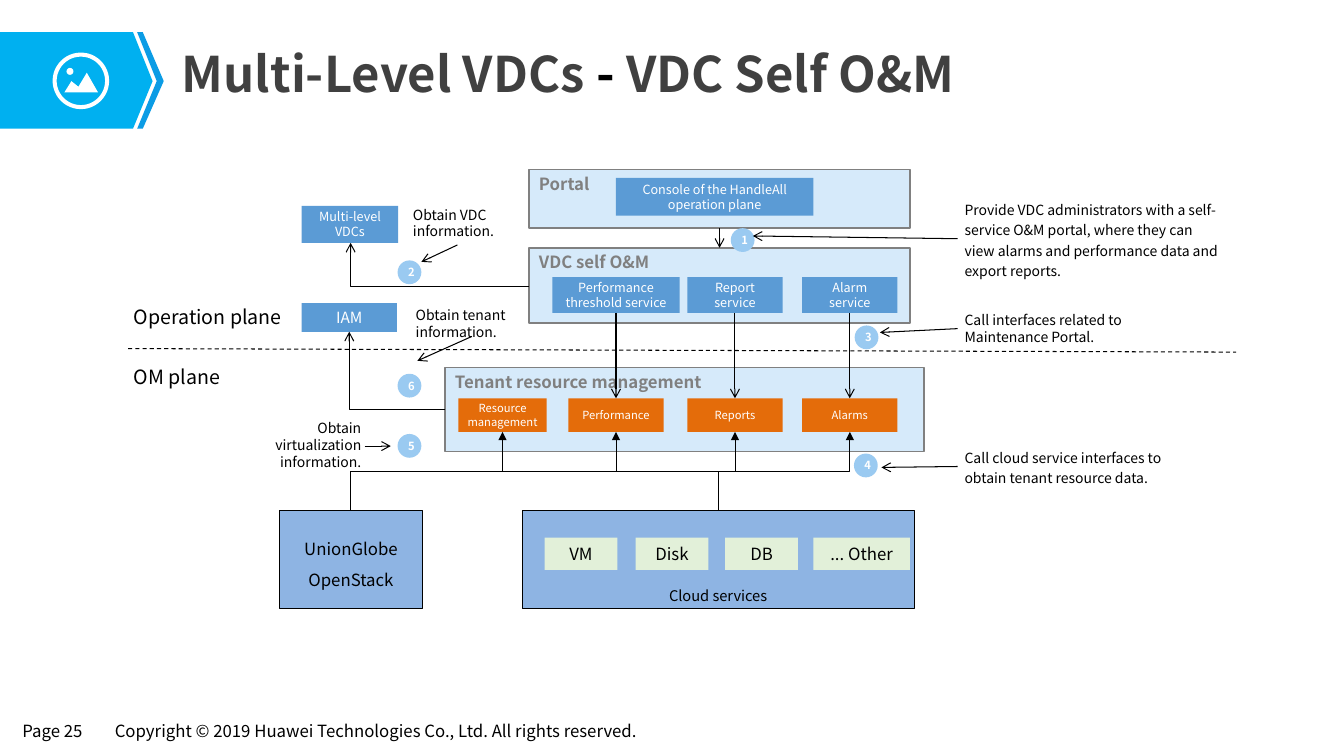
"""Builds the slide on self O&M in multi-level VDCs."""
from lxml.etree import SubElement
from pptx import Presentation
from pptx.dml.color import RGBColor
from pptx.enum.dml import MSO_LINE
from pptx.enum.shapes import MSO_CONNECTOR, MSO_SHAPE
from pptx.enum.text import MSO_ANCHOR, PP_ALIGN
from pptx.oxml.ns import qn
from pptx.util import Pt

HUES = {
    "black": "000000", "white": "FFFFFF", "dark": "404040", "gray": "808080",
    "cyan": "00B0F0", "edge": "0B9CE5", "pale": "D6EAFA", "blue": "5B9BD5",
    "orange": "E46C0A", "cloud": "8EB4E3", "green": "E2F0D9", "dot": "9ACAF1",
}
HUES = {name: RGBColor.from_string(code) for name, code in HUES.items()}
FONT = "Noto Sans CJK SC"
LEFT, MID, RIGHT = PP_ALIGN.LEFT, PP_ALIGN.CENTER, PP_ALIGN.RIGHT
TOP, CORE, BASE = MSO_ANCHOR.TOP, MSO_ANCHOR.MIDDLE, MSO_ANCHOR.BOTTOM

deck = Presentation()
deck.slide_width, deck.slide_height = Pt(960), Pt(540)
slide = deck.slides.add_slide(deck.slide_layouts[6])
shapes = slide.shapes


def box(at, text="", size=9, ink="white", fill=None, line=None, width=0.75,
        bold=False, align=MID, anchor=CORE, pad=7, gap=None, kind=MSO_SHAPE.RECTANGLE):
    """Adds a shape, or a text box if kind is None."""
    at = [Pt(n) for n in at]
    item = shapes.add_shape(kind, *at) if kind else shapes.add_textbox(*at)
    if kind:
        item.shadow.inherit = False
    if fill:
        item.fill.solid()
        item.fill.fore_color.rgb = HUES[fill]
    else:
        item.fill.background()
    if line:
        item.line.color.rgb = HUES[line]
        item.line.width = Pt(width)
    else:
        item.line.fill.background()
    if text:
        frame = item.text_frame
        frame.word_wrap = True
        frame.vertical_anchor = anchor
        frame.margin_left = frame.margin_right = Pt(pad)
        frame.margin_top = frame.margin_bottom = Pt(3)
        para = frame.paragraphs[0]
        para.text = text
        para.alignment = align
        if gap:
            para.line_spacing = gap
        para.font.name, para.font.size, para.font.bold = FONT, Pt(size), bold
        para.font.color.rgb = HUES[ink]
    return item


def link(start, end, width=0.75, tip=None, kind=MSO_CONNECTOR.STRAIGHT, dash=None):
    """Adds a black connector with an optional arrowhead."""
    item = shapes.add_connector(kind, *[Pt(n) for n in (*start, *end)])
    item.line.color.rgb = HUES["black"]
    item.line.width = Pt(width)
    if dash:
        item.line.dash_style = dash
    props = item._element.spPr
    if tip:
        SubElement(props.find(qn("a:ln")), qn("a:tailEnd"), type=tip)
    SubElement(props, qn("a:effectLst"))
    return item


box((9, 512, 64, 21), "Page 25", 12, "black", align=LEFT, anchor=TOP, kind=None)
box((75, 512, 404, 21), "Copyright © 2019 Huawei Technologies Co., Ltd. All rights reserved.",
    12, "black", align=LEFT, anchor=TOP, kind=None)

outlines = [
    ("cyan", [(0, 23), (95, 23), (109, 57.5), (95, 92), (0, 92)]),
    ("edge", [(98, 23), (102, 23), (117, 57.5), (102, 92), (98, 92), (112, 57.5)]),
    ("white", [(45.5, 66), (51, 57.5), (55.5, 62.5), (62.5, 52.5), (70.5, 66)]),
]
for hue, points in outlines:
    pen = shapes.build_freeform(*points[0], scale=Pt(1))
    pen.add_line_segments(points[1:], close=True)
    form = pen.convert_to_shape()
    form.shadow.inherit = False
    form.fill.solid()
    form.fill.fore_color.rgb = HUES[hue]
    form.line.fill.background()
box((39, 39, 37.5, 37.5), line="white", width=2.9, kind=MSO_SHAPE.OVAL)
box((47.5, 48.5, 5, 5), fill="white", kind=MSO_SHAPE.OVAL)

title = box((123, 18, 801, 68), "Multi-Level VDCs ", 35, "dark", bold=True, align=LEFT, kind=None)
para = title.text_frame.paragraphs[0]
para.font.size = None
for text, size, hue in [("- ", 36, "black"), ("VDC Self O&M", 35, "dark")]:
    run = para.add_run()
    run.text = text
    run.font.size, run.font.color.rgb = Pt(size), HUES[hue]
para.runs[0].font.size = Pt(35)

panels = {}
for name, at in [
    ("Tenant resource management", (318, 262.5, 342, 60)),
    ("VDC self O&M", (378, 177, 272, 54)),
    ("Portal", (378, 121, 272, 42)),
]:
    panels[name] = box(at, name, 12, "gray", "pale", "gray", 1.25, True, LEFT, TOP)

box((440, 127, 141, 27), "Console of the HandleAll operation plane", fill="blue")
box((215.5, 147, 69, 26.5), "Multi-level VDCs", fill="blue")
box((215.5, 216.5, 68, 20.5), "IAM", 11, fill="blue")
box((327.5, 284.5, 63, 24), "Resource management", 8, fill="orange", pad=5)

pairs = []
for mid, wide, upper, lower in [
    (440, 91, "Performance threshold service", "Performance"),
    (525, 68, "Report service", "Reports"),
    (607, 68, "Alarm service", "Alarms"),
]:
    pairs.append((box((mid - wide / 2, 198, wide, 25.5), upper, fill="blue"),
                  box((mid - 34, 284.5, 68, 24), lower, 8, fill="orange", pad=5)))

cloud = box((373, 364.5, 280, 70.5), "Cloud services", 10.5, "black", "cloud", "black",
            anchor=BASE, gap=2)
for left, wide, name in [(389, 52, "VM"), (454, 52, "Disk"), (518, 52, "DB"), (581, 69, "... Other")]:
    box((left, 384, wide, 23), name, 12, "black", "green")
box((199.5, 364.5, 102.5, 70), "UnionGlobe OpenStack", 12, "black", "cloud", "black", gap=1.5)

link((91.5, 249), (883, 251.5), dash=MSO_LINE.DASH)
for top, name in [(214.5, "Operation plane"), (258, "OM plane")]:
    box((88.5, top, 139, 24.5), name, 14, "black", align=LEFT, anchor=TOP, kind=None)

spots = [(522, 163), (284, 186), (610.5, 232.5), (610, 324), (284, 310), (284, 267)]
for step, spot in enumerate(spots, 1):
    box((*spot, 17, 17), str(step), 8, fill="dot", bold=True, kind=MSO_SHAPE.OVAL)

notes = [
    ((684, 146, 195, 49), (0.5, 0, 0.46, -0.75), LEFT, 1.2,
     "Provide VDC administrators with a self-service O&M portal, where they can "
     "view alarms and performance data and export reports."),
    ((290, 150.5, 73.5, 17.5), (1.4, 0.5, 2.09, 0.15), LEFT, None, "Obtain VDC information."),
    ((292, 223.5, 88.5, 15), (1.12, 0.51, 2.28, 0.07), LEFT, None, "Obtain tenant information."),
    ((178, 309, 85, 17.5), (0.55, 0.97, 0.55, 1.19), RIGHT, None, "Obtain virtualization information."),
    ((684, 225, 146, 19.5), (0.5, 0, 0.64, -0.38), LEFT, None,
     "Call interfaces related to Maintenance Portal."),
    ((684, 322, 170, 22.5), (0.5, 0, 0.53, -0.32), LEFT, 1.2,
     "Call cloud service interfaces to obtain tenant resource data."),
]
for at, bends, align, gap, text in notes:
    note = box(at, text, 10, "black", line="black", align=align, pad=5, gap=gap,
               kind=MSO_SHAPE.LINE_CALLOUT_1_NO_BORDER)
    for index, bend in enumerate(bends):
        note.adjustments[index] = bend
    SubElement(note._element.spPr.find(qn("a:ln")), qn("a:tailEnd"), type="arrow")

for above, below in [(panels["Portal"], panels["VDC self O&M"]), *pairs]:
    arrow = link((0, 0), (0, 0), tip="arrow")
    arrow.begin_connect(above, 2)
    arrow.end_connect(below, 0)

for start, end in [((378, 204.5), (250.5, 173.5)), ((318, 292.5), (249.5, 237))]:
    turn = link(start, end, tip="arrow", kind=MSO_CONNECTOR.ELBOW)
    turn._element.spPr.find(qn("a:prstGeom")).set("prst", "bentConnector2")

base, tip, root = 364.5, 308.5, 250.5
rise, core = (base - tip) / 2, (base + tip) / 2
for goal in (359, 440, 525, 607):
    mid, half = (root + goal) / 2, (goal - root) / 2
    turn = link((mid + rise, core + half), (mid - rise, core - half), 0.5, "triangle",
                MSO_CONNECTOR.ELBOW)
    turn._element.spPr.find(qn("a:xfrm")).set("rot", "5400000")

stem = link((513, 364.5), (513, 337.5), 0.5)
stem.begin_connect(cloud, 0)

deck.save("out.pptx")
